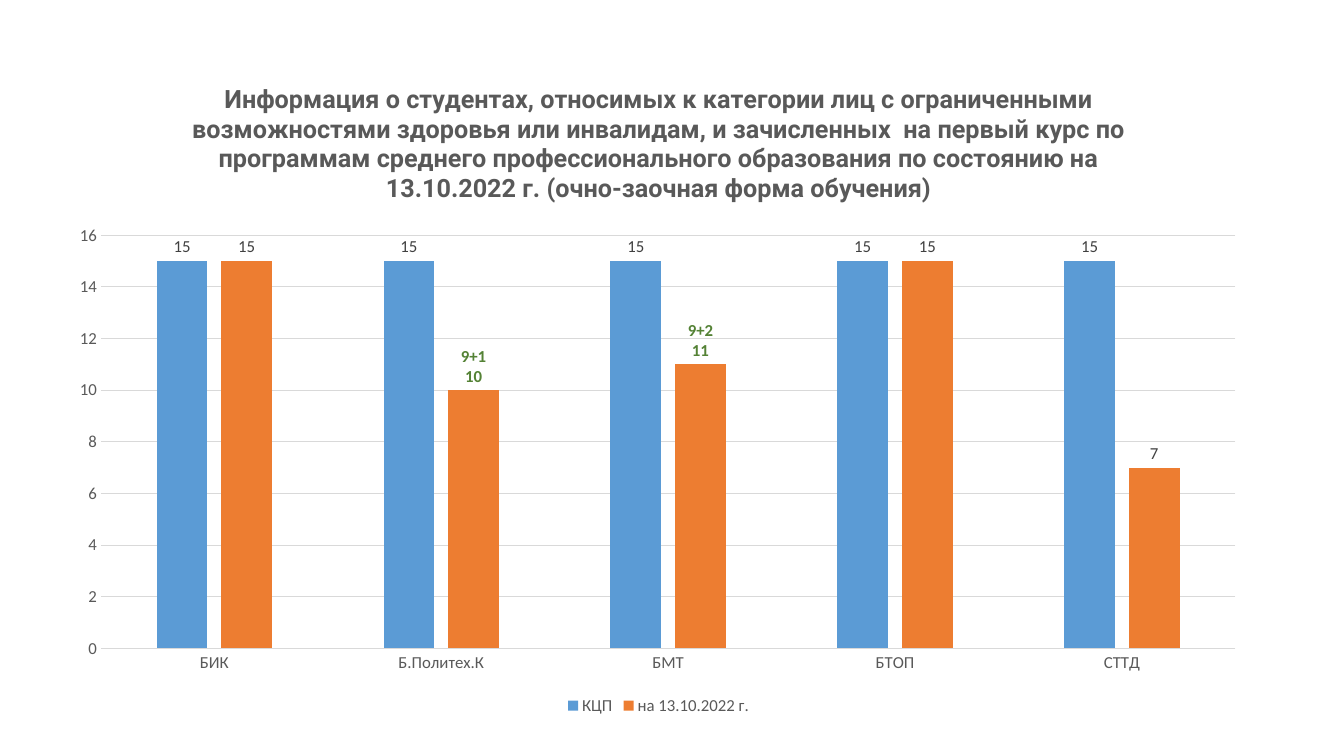
from dataclasses import dataclass, field
from typing import Any

from lxml.etree import SubElement
from pptx import Presentation
from pptx.chart.chart import Chart
from pptx.chart.data import CategoryChartData
from pptx.dml.color import RGBColor
from pptx.enum.chart import XL_CHART_TYPE as ChartType
from pptx.enum.chart import XL_LABEL_POSITION as LabelPosition
from pptx.enum.chart import XL_LEGEND_POSITION as LegendPosition
from pptx.enum.chart import XL_TICK_MARK as TickMark
from pptx.enum.text import PP_ALIGN as Align
from pptx.oxml.ns import qn
from pptx.util import Inches, Pt

SLIDE_WIDTH, SLIDE_HEIGHT = Inches(13.33), Inches(7.5)

# Shares of the slide for the chart, shares of the chart for the plot
CHART_AREA = {"x": 0.041, "y": 0.079, "w": 0.898, "h": 0.873}
PLOT_AREA = {"x": 0.038, "y": 0.266, "w": 0.94, "h": 0.626}

TITLE = (
    "Информация о студентах, относимых к категории лиц с ограниченными "
    "возможностями здоровья или инвалидам, и зачисленных  на первый курс по "
    "программам среднего профессионального образования по состоянию на "
    "13.10.2022 г. (очно-заочная форма обучения)"
)
COLLEGES = ["БИК", "Б.Политех.К", "БМТ", "БТОП", "СТТД"]
GREY, LABEL_GREY, GRID_GREY, GREEN = "595959", "404040", "D9D9D9", "548235"


@dataclass
class Enrolment:
    name: str
    values: list[int]
    color: str
    notes: dict[int, list[str]] = field(default_factory=dict)


ENROLMENTS = [
    Enrolment("КЦП", [15] * 5, "5B9BD5"),
    Enrolment("на 13.10.2022 г.", [15, 10, 11, 15, 7], "ED7D31",
              {1: ["9+1", "10"], 2: ["9+2", "11"]}),
]


def rgb(color: str) -> RGBColor:
    return RGBColor.from_string(color)


def set_format(target: Any, values: dict[str, Any]) -> None:
    for name, value in values.items():
        setattr(target, name, value)


def set_font(font: Any, color: str, size: float = 12,
             name: str = "Calibri", bold: bool = False) -> None:
    set_format(font, {"size": Pt(size), "name": name, "bold": bold})
    font.color.rgb = rgb(color)


def set_line(line: Any) -> None:
    line.color.rgb = rgb(GRID_GREY)
    line.width = Pt(0.75)


def add_title(chart: Chart) -> None:
    paragraph = chart.chart_title.text_frame.paragraphs[0]
    paragraph.alignment = Align.CENTER
    run = paragraph.add_run()
    run.text = TITLE
    set_font(run.font, GREY, 18, "Roboto", True)
    chart.chart_title.include_in_layout = False


def format_axes(chart: Chart) -> None:
    for axis in (chart.category_axis, chart.value_axis):
        set_format(axis, {"major_tick_mark": TickMark.NONE,
                          "minor_tick_mark": TickMark.NONE})
        set_font(axis.tick_labels.font, GREY)
    set_line(chart.category_axis.format.line)
    value_axis = chart.value_axis
    set_format(value_axis, {"minimum_scale": 0, "maximum_scale": 16,
                            "major_unit": 2, "has_major_gridlines": True})
    value_axis.format.line.fill.background()
    set_line(value_axis.major_gridlines.format.line)


def format_series(series: Any, enrolment: Enrolment) -> None:
    series.format.fill.solid()
    series.format.fill.fore_color.rgb = rgb(enrolment.color)
    series.invert_if_negative = False
    labels = series.data_labels
    set_format(labels, {"show_value": True, "position": LabelPosition.OUTSIDE_END})
    set_font(labels.font, LABEL_GREY)
    # Green two-line labels of single columns
    for index, lines in enrolment.notes.items():
        label = series.points[index].data_label
        frame = label.text_frame
        for number, text in enumerate(lines):
            paragraph = frame.add_paragraph() if number else frame.paragraphs[0]
            run = paragraph.add_run()
            run.text = text
            set_font(run.font, GREEN, bold=True)
        label.position = LabelPosition.OUTSIDE_END


def place_plot(chart: Chart) -> None:
    plot_area = chart.plots[0]._element.getparent()
    layout = plot_area.find(qn("c:layout"))
    if layout is None:
        layout = SubElement(plot_area, qn("c:layout"))
        plot_area.insert(0, layout)
    manual = SubElement(layout, qn("c:manualLayout"))
    settings = {"layoutTarget": "inner", "xMode": "edge", "yMode": "edge", **PLOT_AREA}
    for name, value in settings.items():
        SubElement(manual, qn(f"c:{name}")).set("val", str(value))


def add_enrolment_chart(slide: Any) -> None:
    data = CategoryChartData()
    data.categories = COLLEGES
    for enrolment in ENROLMENTS:
        data.add_series(enrolment.name, enrolment.values)
    left, width = (int(SLIDE_WIDTH * CHART_AREA[key]) for key in "xw")
    top, height = (int(SLIDE_HEIGHT * CHART_AREA[key]) for key in "yh")
    chart = slide.shapes.add_chart(
        ChartType.COLUMN_CLUSTERED, left, top, width, height, data).chart
    set_font(chart.font, "000000", 10)
    add_title(chart)
    format_axes(chart)

    # Columns
    plot = chart.plots[0]
    set_format(plot, {"gap_width": 219, "overlap": -27, "vary_by_categories": False})
    for series, enrolment in zip(plot.series, ENROLMENTS):
        format_series(series, enrolment)
    place_plot(chart)

    # Legend
    chart.has_legend = True
    set_format(chart.legend, {"position": LegendPosition.BOTTOM,
                              "include_in_layout": False})
    set_font(chart.legend.font, GREY)


def main() -> None:
    presentation = Presentation()
    set_format(presentation, {"slide_width": SLIDE_WIDTH, "slide_height": SLIDE_HEIGHT})
    slide = presentation.slides.add_slide(presentation.slide_layouts[6])
    add_enrolment_chart(slide)
    presentation.save("out.pptx")


if __name__ == "__main__":
    main()
